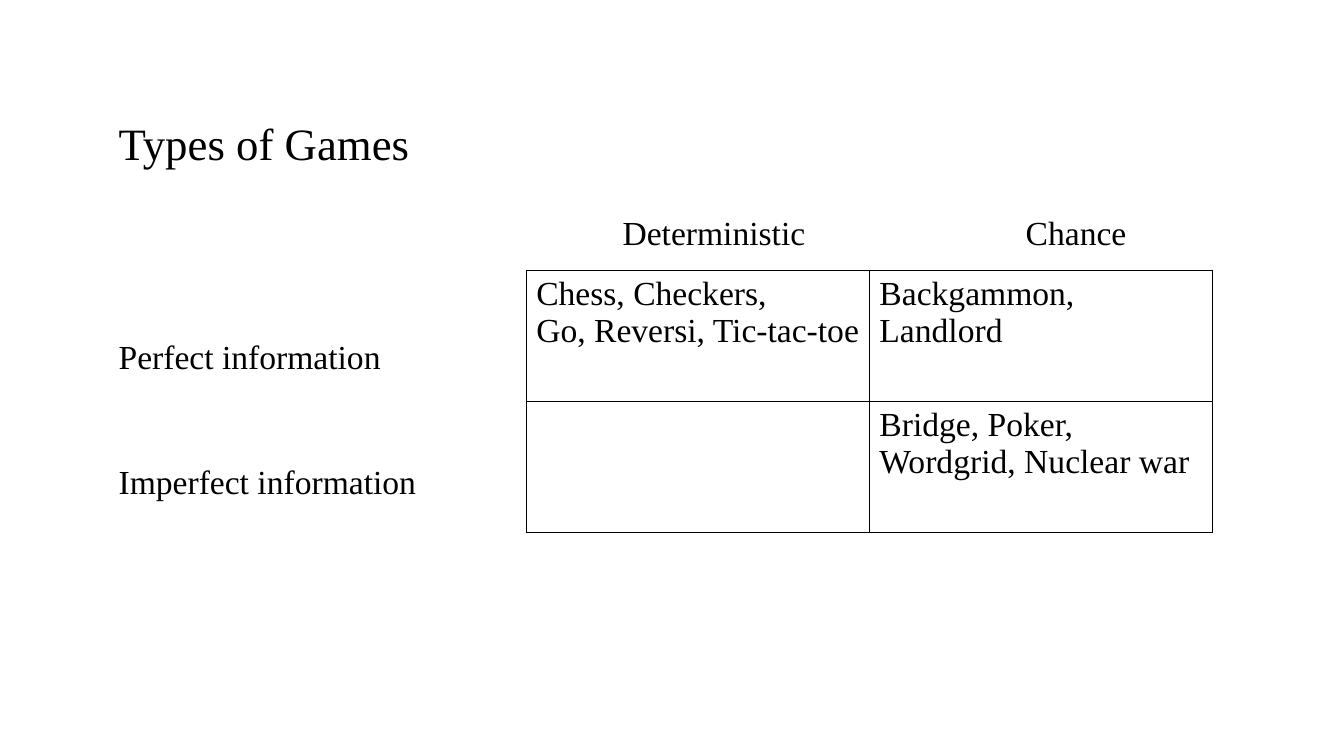
from dataclasses import dataclass

from lxml.etree import SubElement
from pptx import Presentation
from pptx.dml.color import RGBColor
from pptx.oxml.ns import qn
from pptx.util import Cm, Pt


@dataclass(frozen=True)
class Theme:
    font: str = "Times New Roman"
    ink: str = "000000"
    paper: str = "FFFFFF"
    title_size: int = 32
    body_size: int = 24
    border: int = 1


@dataclass(frozen=True)
class Box:
    left: float
    top: float
    width: float
    height: float

    def emu(self):
        return [Cm(n) for n in (self.left, self.top, self.width, self.height)]


THEME = Theme()
OUTLINE = [
    ("Types of Games", THEME.title_size, 0),
    ("\tDeterministic\tChance", THEME.body_size, 30),
    ("Perfect information", THEME.body_size, 60),
    ("Imperfect information", THEME.body_size, 60),
]
HEADING_TABS = (12.7, 22.86)
GAMES = [
    ["Chess, Checkers,\nGo, Reversi, Tic-tac-toe", "Backgammon,\nLandlord"],
    ["", "Bridge, Poker, Wordgrid, Nuclear war"],
]


def style(paragraph, size):
    paragraph.font.name = THEME.font
    paragraph.font.size = Pt(size)
    paragraph.font.color.rgb = RGBColor.from_string(THEME.ink)


def add_tabs(paragraph, stops):
    tabs = SubElement(paragraph._p.get_or_add_pPr(), qn("a:tabLst"))
    for stop in stops:
        SubElement(tabs, qn("a:tab"), pos=str(Cm(stop)), algn="l")


def add_borders(cell):
    properties = cell._tc.get_or_add_tcPr()
    for position, side in enumerate(("a:lnL", "a:lnR", "a:lnT", "a:lnB")):
        edge = SubElement(properties, qn(side), w=str(Pt(THEME.border)))
        fill = SubElement(edge, qn("a:solidFill"))
        SubElement(fill, qn("a:srgbClr"), val=THEME.ink)
        properties.insert(position, edge)


def add_outline(slide, box):
    frame = slide.shapes.add_textbox(*box.emu()).text_frame
    frame.word_wrap = True
    frame.text = "\n".join(text for text, _, _ in OUTLINE)
    for paragraph, (text, size, gap) in zip(frame.paragraphs, OUTLINE):
        if gap:
            paragraph.space_before = Pt(gap)
        if "\t" in text:
            add_tabs(paragraph, HEADING_TABS)
        style(paragraph, size)


def add_games(slide, box):
    games = slide.shapes.add_table(len(GAMES), len(GAMES[0]), *box.emu()).table
    for cell, text in zip(games.iter_cells(), sum(GAMES, [])):
        cell.text = text
        cell.margin_right = Cm(0.2)
        cell.fill.solid()
        cell.fill.fore_color.rgb = RGBColor.from_string(THEME.paper)
        add_borders(cell)
        for paragraph in cell.text_frame.paragraphs:
            style(paragraph, THEME.body_size)
            paragraph.font.bold = False


def main():
    presentation = Presentation()
    presentation.slide_width = Cm(33.87)
    presentation.slide_height = Cm(19.05)
    slide = presentation.slides.add_slide(presentation.slide_layouts[6])
    add_outline(slide, Box(2.74, 2.8, 29.36, 12.8))
    add_games(slide, Box(13.26, 6.81, 17.3, 6.6))
    presentation.save("out.pptx")


if __name__ == "__main__":
    main()
